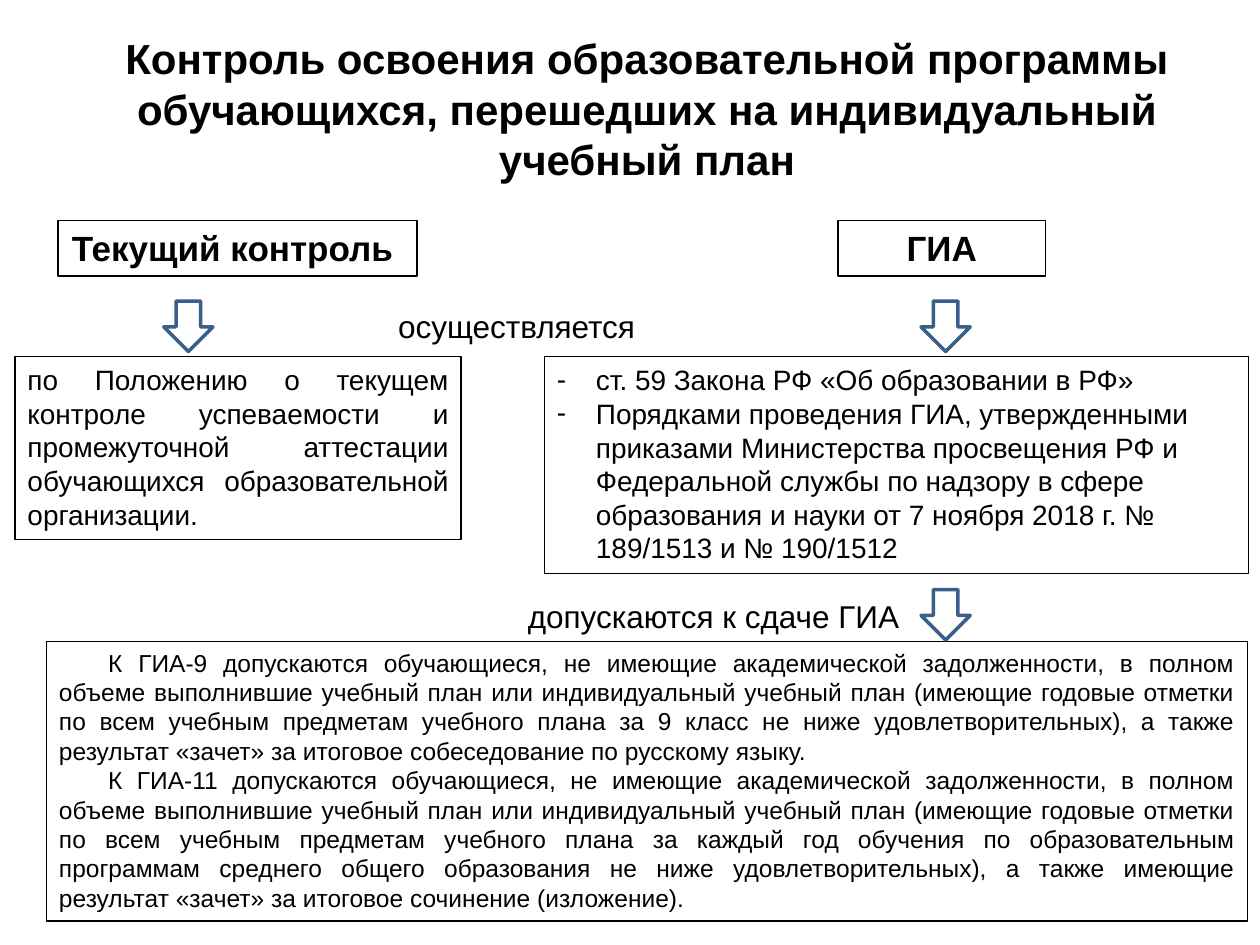
from collections import namedtuple

from lxml import etree
from pptx import Presentation
from pptx.dml.color import RGBColor
from pptx.enum import shapes, text
from pptx.oxml import ns
from pptx.util import Inches, Pt

BLACK = RGBColor(0x00, 0x00, 0x00)
ARROW_BLUE = RGBColor(0x3A, 0x5F, 0x8C)
FONT = "Arial"
ALIGN = text.PP_ALIGN

Box = namedtuple("Box", "left top width height")

TITLE = ("Контроль освоения образовательной программы обучающихся, "
         "перешедших на индивидуальный учебный план")
CURRENT_RULES = ["по Положению о текущем контроле успеваемости и промежуточной "
                 "аттестации обучающихся образовательной организации."]
GIA_RULES = [
    "ст. 59 Закона РФ «Об образовании в РФ»",
    "Порядками проведения ГИА, утвержденными приказами Министерства просвещения РФ "
    "и Федеральной службы по надзору в сфере образования и науки "
    "от 7 ноября 2018 г. № 189/1513 и № 190/1512",
]
ADMISSION = ("К ГИА-{} допускаются обучающиеся, не имеющие академической задолженности, "
             "в полном объеме выполнившие учебный план или индивидуальный учебный план "
             "(имеющие годовые отметки по всем учебным предметам учебного плана за {} "
             "не ниже удовлетворительных), а также {}.")
ADMISSION_RULES = [
    ADMISSION.format(9, "9 класс",
                     "результат «зачет» за итоговое собеседование по русскому языку"),
    ADMISSION.format(11, "каждый год обучения по образовательным программам "
                         "среднего общего образования",
                     "имеющие результат «зачет» за итоговое сочинение (изложение)"),
]


def place(shape, box):
    shape.left, shape.top, shape.width, shape.height = map(Inches, box)


def write(shape, paragraphs, size, bold=False, align=ALIGN.LEFT, wrap=True,
          margin=0, indent=0, bullet=None):
    frame = shape.text_frame
    frame.word_wrap = wrap
    frame.auto_size = text.MSO_AUTO_SIZE.NONE
    frame.vertical_anchor = text.MSO_ANCHOR.TOP
    for index, words in enumerate(paragraphs):
        para = frame.add_paragraph() if index else frame.paragraphs[0]
        para.alignment = align
        para.space_before = Pt(0)
        span = para.add_run()
        span.text = words
        span.font.name = FONT
        span.font.size = Pt(size)
        span.font.bold = bold
        span.font.color.rgb = BLACK
        properties = para._p.get_or_add_pPr()
        properties.set("marL", str(Inches(margin)))
        properties.set("indent", str(Inches(indent)))
        if bullet:
            etree.SubElement(properties, ns.qn("a:buFont")).set("typeface", FONT)
            etree.SubElement(properties, ns.qn("a:buChar")).set("char", bullet)


def outline(shape, color=BLACK, width=0.75):
    shape.fill.background()
    shape.line.color.rgb = color
    shape.line.width = Pt(width)


def add_outlined(page, kind, box, **line):
    shape = page.shapes.add_shape(kind, *map(Inches, box))
    shape.shadow.inherit = False
    outline(shape, **line)
    return shape


def add_panel(page, box, paragraphs, **style):
    panel = add_outlined(page, shapes.MSO_SHAPE.RECTANGLE, box)
    write(panel, paragraphs, **style)


def add_label(page, box, words, **style):
    label = page.shapes.add_textbox(*map(Inches, box))
    write(label, [words], 18, **style)


def add_down_arrow(page, left, top):
    add_outlined(page, shapes.MSO_SHAPE.DOWN_ARROW, Box(left, top, 0.39, 0.4),
                 color=ARROW_BLUE, width=2)


def add_heading(page, box, words, arrow_offset, wrap=True):
    """Framed heading with an arrow beneath it."""
    add_panel(page, box, [words], size=20, bold=True, align=ALIGN.CENTER, wrap=wrap)
    add_down_arrow(page, box.left + arrow_offset, box.top + 0.64)


def add_gia_rules(page, box):
    body = page.placeholders[1]
    place(body, box)
    outline(body)
    write(body, GIA_RULES, 16, margin=0.31, indent=-0.31, bullet="-")


def add_admission(page, box):
    """Admission rules with the label and arrow that lead to them."""
    add_panel(page, box, ADMISSION_RULES, size=14, align=ALIGN.JUSTIFY, indent=0.39)
    add_label(page, Box(box.left + 3.72, box.top - 0.4, 4.02, 0.4),
              "допускаются к сдаче ГИА")
    add_down_arrow(page, box.left + 6.94, box.top - 0.41)


def main():
    deck = Presentation()
    deck.slide_width, deck.slide_height = Inches(10), Inches(7.5)
    page = deck.slides.add_slide(deck.slide_layouts[1])

    title = page.shapes.title
    place(title, Box(0.46, 0.21, 9.35, 1.31))
    write(title, [TITLE], 24, bold=True, align=ALIGN.CENTER)

    add_heading(page, Box(0.46, 1.75, 2.85, 0.44), "Текущий контроль ", 0.84, wrap=False)
    add_heading(page, Box(6.65, 1.75, 1.65, 0.44), "ГИА", 0.66)
    add_label(page, Box(2.09, 2.39, 4.02, 0.4), "осуществляется", align=ALIGN.CENTER)
    add_panel(page, Box(0.12, 2.83, 3.54, 1.45), CURRENT_RULES,
              size=16, align=ALIGN.JUSTIFY)
    add_gia_rules(page, Box(4.32, 2.83, 5.59, 1.72))
    add_admission(page, Box(0.37, 5.09, 9.53, 2.22))

    deck.save("out.pptx")


if __name__ == "__main__":
    main()
